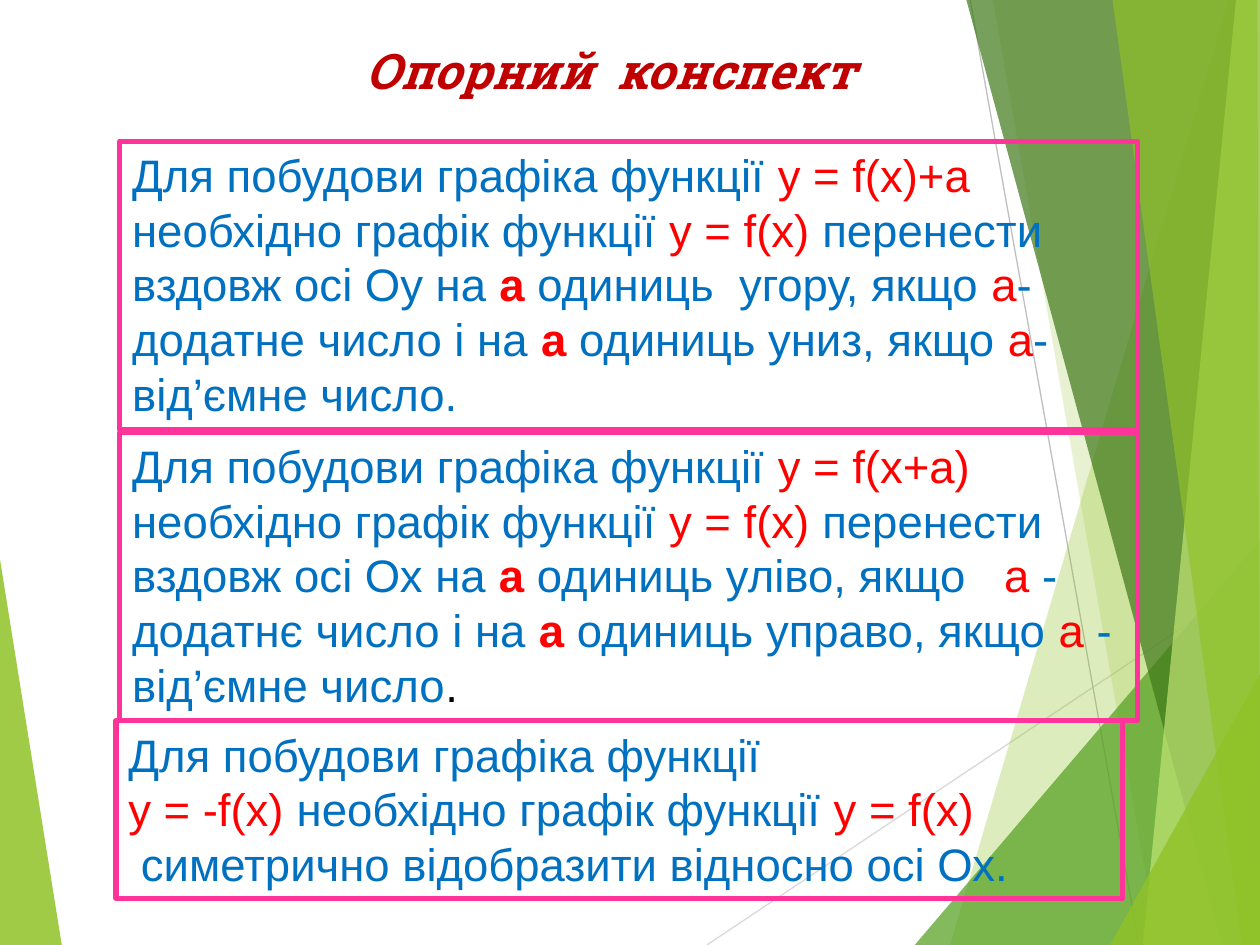
"""Build the summary slide on shifting and reflecting function graphs."""
from dataclasses import dataclass

from lxml import etree
from pptx import Presentation
from pptx.dml.color import RGBColor
from pptx.enum.shapes import MSO_CONNECTOR, MSO_SHAPE
from pptx.enum.text import MSO_ANCHOR, MSO_AUTO_SIZE, PP_ALIGN
from pptx.oxml.ns import qn
from pptx.util import Pt

STRAIGHT = MSO_CONNECTOR.STRAIGHT
RECTANGLE = MSO_SHAPE.RECTANGLE
TOP = MSO_ANCHOR.TOP
NO_AUTOFIT = MSO_AUTO_SIZE.NONE
LEFT, CENTER = PP_ALIGN.LEFT, PP_ALIGN.CENTER

PX = 9144
WIDTH, HEIGHT = 1000, 750
TITLE_ONLY = 5

LIME = RGBColor(0x90, 0xC2, 0x26)
GREEN = RGBColor(0x54, 0xA0, 0x21)
DARK_GREEN = RGBColor(0x3F, 0x78, 0x19)
PALE_LIME = RGBColor(0xC0, 0xE4, 0x74)
LIGHT_GRAY = RGBColor(0xD9, 0xD9, 0xD9)
GRAY = RGBColor(0xBF, 0xBF, 0xBF)
PINK = RGBColor(0xFF, 0x33, 0x99)
BLUE = RGBColor(0x00, 0x70, 0xC0)
RED = RGBColor(0xFF, 0x00, 0x00)
DARK_RED = RGBColor(0xC0, 0x00, 0x00)
BLACK = RGBColor(0x00, 0x00, 0x00)


@dataclass(frozen=True)
class Facet:
    points: tuple
    color: RGBColor
    opacity: int


@dataclass(frozen=True)
class Ray:
    start: tuple
    end: tuple
    color: RGBColor


@dataclass(frozen=True)
class Span:
    text: str
    color: RGBColor = BLUE
    bold: bool = False


@dataclass(frozen=True)
class Rule:
    left: int
    top: int
    width: int
    height: int
    paragraphs: tuple


RAYS = (
    Ray((561, 750), (1000, 457), LIGHT_GRAY),
    Ray((770, 0), (904, 750), GRAY),
)

FACETS = (
    Facet(((975, 0), (754, 750), (1000, 750), (1000, 0)), LIME, 30),
    Facet(((788, 0), (919, 750), (1000, 750), (1000, 0)), LIME, 20),
    Facet(((726, 750), (1000, 429), (1000, 750)), GREEN, 72),
    Facet(((767, 0), (970, 750), (1000, 750), (1000, 0)), DARK_GREEN, 70),
    Facet(((981, 0), (907, 750), (1000, 750), (1000, 0)), PALE_LIME, 70),
    Facet(((883, 0), (986, 750), (1000, 750), (998, 0)), LIME, 65),
    Facet(((881, 750), (1000, 535), (1000, 750)), LIME, 80),
)
LEFT_FACET = Facet(((0, 444), (49, 750), (0, 750)), LIME, 85)

BUILD = Span("Для побудови графіка функції ")
NEED = Span("необхідно графік функції ")
BASE = Span("y = f(x) ", RED)
UNITS = Span("а ", RED, True)

RULES = (
    Rule(95, 112, 808, 229, ((
        BUILD, Span("y = f(x)+a ", RED), NEED, BASE,
        Span("перенести вздовж осі Оу на "), UNITS,
        Span("одиниць  угору, якщо "), Span("а", RED),
        Span("-додатне число і на "), UNITS,
        Span("одиниць униз, якщо "), Span("а", RED),
        Span("-від’ємне число."),
    ),)),
    Rule(95, 343, 808, 229, ((
        BUILD, Span("y = f(x+а) ", RED), NEED, BASE,
        Span("перенести вздовж осі Ох на "), UNITS,
        Span("одиниць уліво, якщо   "), Span("а ", RED),
        Span("- додатнє число і на "), UNITS,
        Span("одиниць управо, якщо "), Span("а ", RED),
        Span("- від’ємне число"), Span(".", BLACK),
    ),)),
    Rule(92, 572, 799, 141, (
        (Span("Для побудови графіка функції"),),
        (Span("y = -f(x) ", RED), NEED, Span("y = f(x)", RED)),
        (Span(" симетрично відобразити відносно осі Ох."),),
    )),
)


def draw_facet(slide, facet: Facet) -> None:
    """Draw one translucent polygon."""
    builder = slide.shapes.build_freeform(*facet.points[0], scale=PX)
    builder.add_line_segments(facet.points[1:], close=True)
    shape = builder.convert_to_shape()
    shape.shadow.inherit = False
    shape.line.fill.background()
    shape.fill.solid()
    shape.fill.fore_color.rgb = facet.color
    color = next(shape.element.spPr.iter(qn("a:srgbClr")))
    etree.SubElement(color, qn("a:alpha"), val=str(facet.opacity * 1000))


def draw_ray(slide, ray: Ray) -> None:
    """Draw one thin straight line."""
    ends = (value * PX for value in ray.start + ray.end)
    connector = slide.shapes.add_connector(STRAIGHT, *ends)
    connector.line.color.rgb = ray.color
    connector.line.width = Pt(0.75)
    etree.SubElement(connector.element.spPr, qn("a:effectLst"))


def draw_rule(slide, rule: Rule) -> None:
    """Draw one outlined box with its coloured text."""
    place = (value * PX for value in (rule.left, rule.top, rule.width, rule.height))
    box = slide.shapes.add_shape(RECTANGLE, *place)
    box.shadow.inherit = False
    box.fill.background()
    box.line.color.rgb = PINK
    box.line.width = Pt(3)
    frame = box.text_frame
    frame.word_wrap = True
    frame.vertical_anchor = TOP
    for index, spans in enumerate(rule.paragraphs):
        para = frame.add_paragraph() if index else frame.paragraphs[0]
        para.alignment = LEFT
        para.font.name = "Arial"
        para.font.size = Pt(26)
        for span in spans:
            run = para.add_run()
            run.text = span.text
            run.font.color.rgb = span.color
            if span.bold:
                run.font.bold = True


def write_title(slide, text: str) -> None:
    """Place and format the slide title."""
    title = slide.shapes.title
    title.left, title.top, title.width, title.height = (
        value * PX for value in (138, 27, 693, 57))
    frame = title.text_frame
    frame.text = text
    frame.word_wrap = True
    frame.auto_size = NO_AUTOFIT
    frame.vertical_anchor = TOP
    para = frame.paragraphs[0]
    para.alignment = CENTER
    font = para.font
    font.name = "Roboto Slab"
    font.size = Pt(28)
    font.bold = font.italic = True
    font.color.rgb = DARK_RED


def main() -> None:
    """Build and save the deck."""
    deck = Presentation()
    deck.slide_width, deck.slide_height = WIDTH * PX, HEIGHT * PX
    slide = deck.slides.add_slide(deck.slide_layouts[TITLE_ONLY])
    draw_facet(slide, LEFT_FACET)
    for ray in RAYS:
        draw_ray(slide, ray)
    for facet in FACETS:
        draw_facet(slide, facet)
    for rule in RULES:
        draw_rule(slide, rule)
    write_title(slide, "Опорний  конспект")
    deck.save("out.pptx")


if __name__ == "__main__":
    main()
